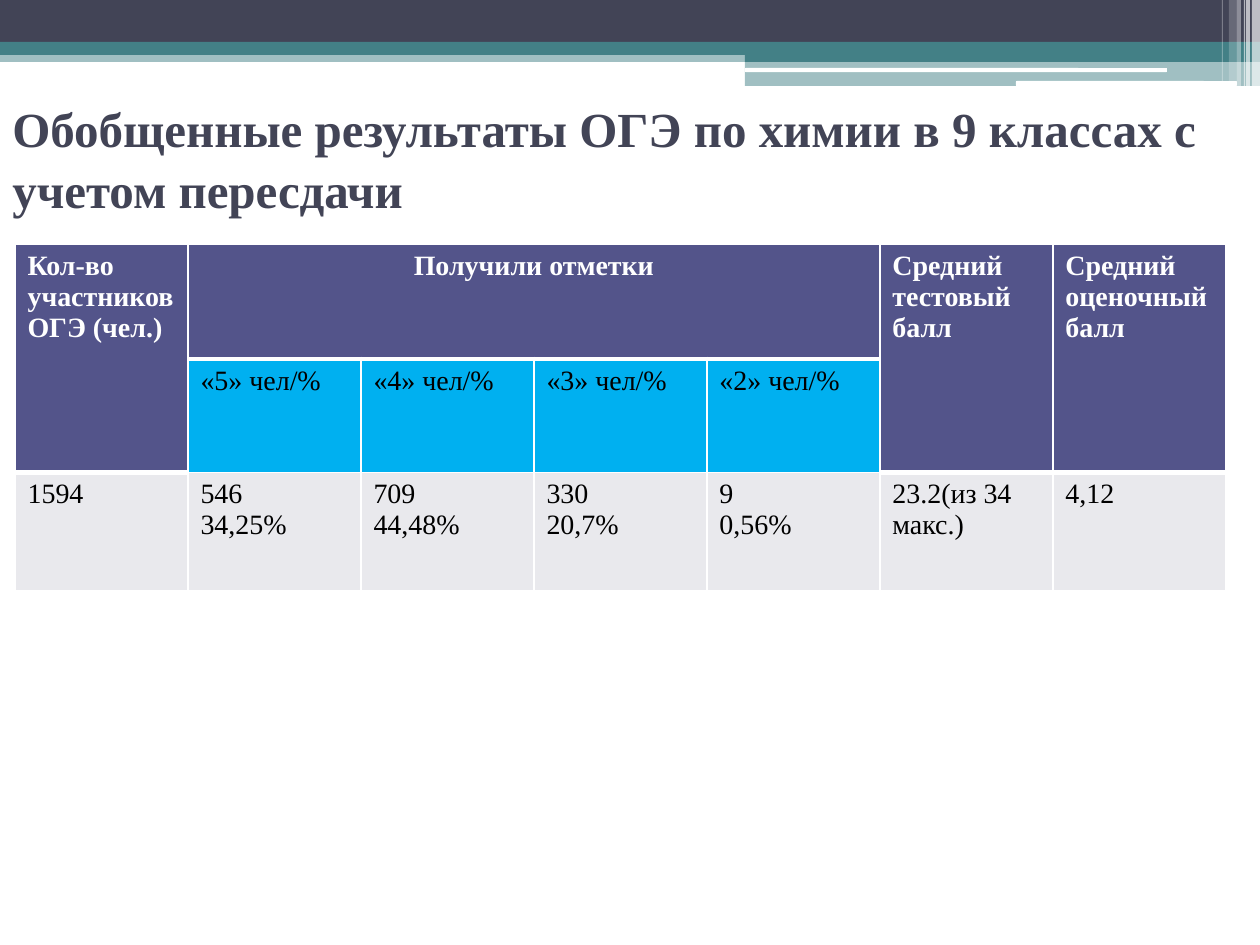
from dataclasses import dataclass

import lxml.etree
import pptx
import pptx.dml.color
import pptx.enum.shapes
import pptx.enum.text
import pptx.oxml.ns
import pptx.util

EMU_PER_PX = 914400 // 126
FONT = "Times New Roman"
WHITE, BLACK, NAVY, TEAL = "FFFFFF", "000000", "424456", "438086"
HEADER, MARK, BODY = "53548A", "00B0F0", "E9E9ED"
ALIGN = pptx.enum.text.PP_ALIGN
SHAPE = pptx.enum.shapes.MSO_SHAPE


@dataclass
class Band:
    left: int
    top: int
    width: int
    height: int
    color: str
    opacity: int = 100
    rounded: bool = False


@dataclass
class Entry:
    row: int
    column: int
    text: str
    fill: str
    row_span: int = 1
    column_span: int = 1
    align: ALIGN = ALIGN.LEFT


BANDS = [
    Band(0, 50, 1260, 12, TEAL, 50),
    Band(0, 0, 1260, 43, NAVY),
    Band(0, 42, 1260, 13, TEAL),
    Band(745, 49, 515, 13, TEAL),
    Band(745, 62, 515, 24, TEAL, 50),
    Band(745, 68, 422, 4, WHITE, rounded=True),
    Band(1016, 81, 221, 5, WHITE, rounded=True),
    # Pale vertical stripes at the right end
    Band(1252, 0, 8, 86, WHITE, 65),
    Band(1246, 0, 4, 86, WHITE, 65),
    Band(1244, 0, 1, 86, WHITE, 60),
    Band(1237, 0, 4, 86, WHITE, 40),
    Band(1229, 0, 8, 81, WHITE, 20),
    Band(1222, 0, 1, 81, WHITE, 30),
]

MARKS = ["5", "4", "3", "2"]
RESULTS = ["1594", "546\n34,25%", "709\n44,48%", "330\n20,7%", "9\n0,56%",
           "23.2(из 34 макс.)", "4,12"]
ENTRIES = [
    Entry(0, 0, "Кол-во участников ОГЭ (чел.)", HEADER, row_span=2),
    Entry(0, 1, "Получили отметки", HEADER, column_span=4, align=ALIGN.CENTER),
    Entry(0, 5, "Средний тестовый балл", HEADER, row_span=2),
    Entry(0, 6, "Средний оценочный балл", HEADER, row_span=2),
    *[Entry(1, i, f"«{mark}» чел/%", MARK) for i, mark in enumerate(MARKS, 1)],
    *[Entry(2, i, result, BODY) for i, result in enumerate(RESULTS)],
]
COLUMN_WIDTH = 173
ROW_HEIGHTS = [115, 104, 118]


def px(length: int) -> int:
    return pptx.util.Emu(length * EMU_PER_PX)


def rgb(color: str) -> pptx.dml.color.RGBColor:
    return pptx.dml.color.RGBColor.from_string(color)


def write(frame, text: str, *, size: float, color: str, bold: bool = False,
          align=ALIGN.LEFT, spacing: float = 1.0) -> None:
    frame.word_wrap = True
    for i, line in enumerate(text.split("\n")):
        para = frame.paragraphs[0] if i == 0 else frame.add_paragraph()
        para.alignment = align
        para.line_spacing = spacing
        span = para.add_run()
        span.text = line
        span.font.name = FONT
        span.font.size = pptx.util.Pt(size)
        span.font.bold = bold
        span.font.color.rgb = rgb(color)


def draw_band(page, band: Band) -> None:
    kind = SHAPE.ROUNDED_RECTANGLE if band.rounded else SHAPE.RECTANGLE
    shape = page.shapes.add_shape(
        kind, px(band.left), px(band.top), px(band.width), px(band.height))
    shape.shadow.inherit = False
    shape.fill.solid()
    shape.fill.fore_color.rgb = rgb(band.color)
    shape.line.fill.background()
    if band.opacity < 100:
        tint = shape.fill._xPr.find(".//" + pptx.oxml.ns.qn("a:srgbClr"))
        alpha = lxml.etree.SubElement(tint, pptx.oxml.ns.qn("a:alpha"))
        alpha.set("val", str(band.opacity * 1000))


def set_borders(cell, top: int, bottom: int) -> None:
    properties = cell._tc.get_or_add_tcPr()
    for side, points in {"L": 1, "R": 1, "T": top, "B": bottom}.items():
        line = lxml.etree.SubElement(properties, pptx.oxml.ns.qn(f"a:ln{side}"))
        line.set("w", str(pptx.util.Pt(points)))
        fill = lxml.etree.SubElement(line, pptx.oxml.ns.qn("a:solidFill"))
        lxml.etree.SubElement(fill, pptx.oxml.ns.qn("a:srgbClr")).set("val", WHITE)


def draw_table(page, left: int, top: int) -> None:
    columns = len(RESULTS)
    table = page.shapes.add_table(
        len(ROW_HEIGHTS), columns, px(left), px(top),
        px(COLUMN_WIDTH * columns), px(sum(ROW_HEIGHTS))).table
    for column in table.columns:
        column.width = px(COLUMN_WIDTH)
    for row, height in zip(table.rows, ROW_HEIGHTS):
        row.height = px(height)

    for entry in ENTRIES:
        is_header = entry.fill == HEADER
        last_row = entry.row + entry.row_span - 1
        last_column = entry.column + entry.column_span - 1
        cell = table.cell(entry.row, entry.column)
        if (last_row, last_column) != (entry.row, entry.column):
            cell.merge(table.cell(last_row, last_column))
        for r in range(entry.row, last_row + 1):
            for c in range(entry.column, last_column + 1):
                part = table.cell(r, c)
                below_header = r == 1 or (r == 2 and c in (0, 5, 6))
                set_borders(part, 3 if below_header else 1, 3 if is_header else 1)
                part.fill.solid()
                part.fill.fore_color.rgb = rgb(entry.fill)
        write(cell.text_frame, entry.text, size=16, bold=is_header,
              color=WHITE if is_header else BLACK, align=entry.align)


def main() -> None:
    deck = pptx.Presentation()
    deck.slide_width, deck.slide_height = px(1260), px(945)
    page = deck.slides.add_slide(deck.slide_layouts[6])

    # Top decoration
    for band in BANDS:
        draw_band(page, band)

    # Title
    box = page.shapes.add_textbox(px(0), px(86), px(1260), px(142))
    box.text_frame.vertical_anchor = pptx.enum.text.MSO_ANCHOR.MIDDLE
    write(box.text_frame,
          "Обобщенные результаты ОГЭ по химии в 9 классах с учетом пересдачи",
          size=28, color=NAVY, bold=True, spacing=1.05)

    # Exam results
    draw_table(page, 15, 244)
    deck.save("out.pptx")


if __name__ == "__main__":
    main()
